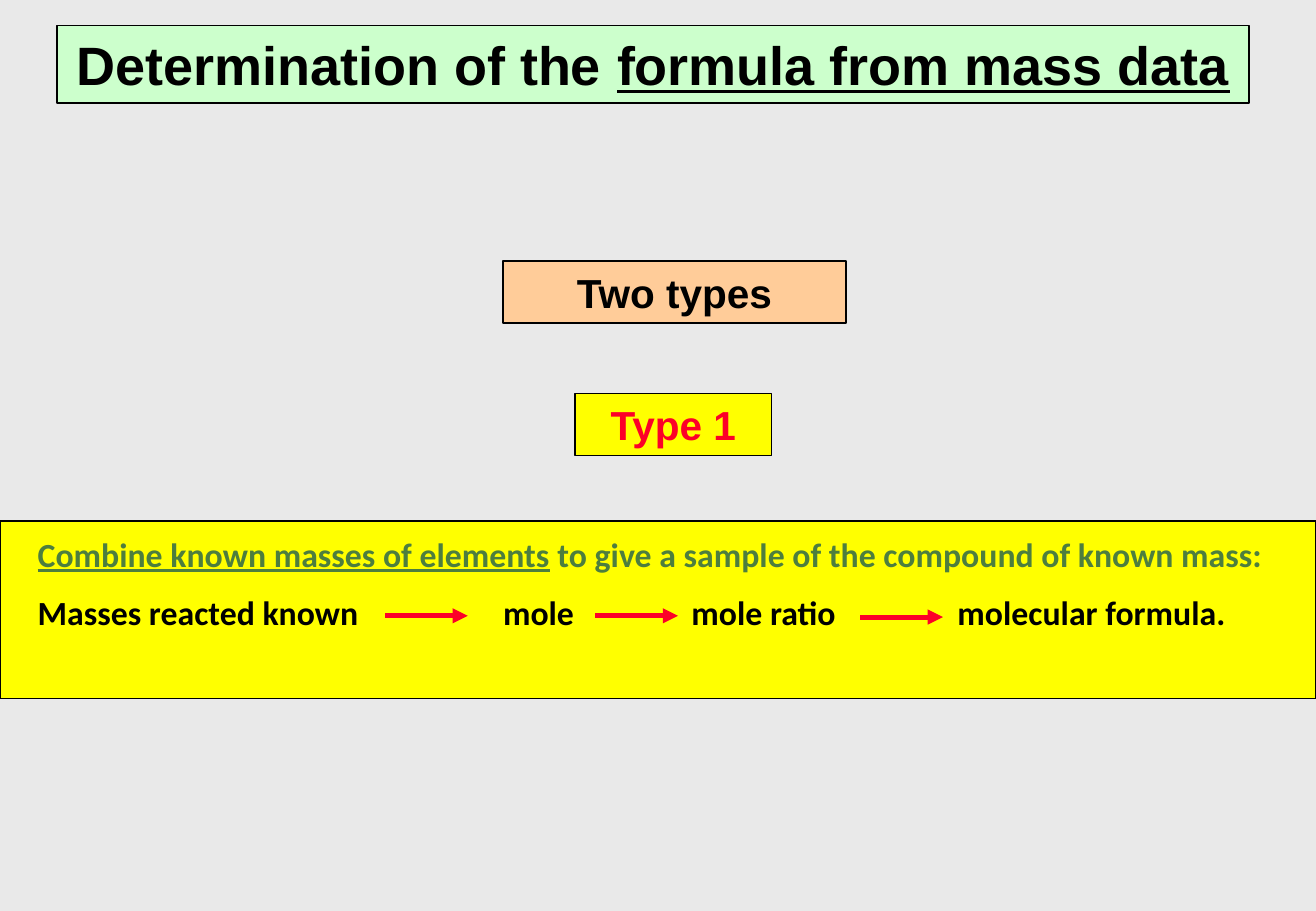
import pptx
import pptx.dml.color
import pptx.enum.shapes
import pptx.enum.text
import pptx.oxml
import pptx.oxml.ns
import pptx.util
from pptx.util import Inches

COLORS = {
    "background": "E9E9E9", "black": "000000", "mint": "CCFFCC",
    "peach": "FFCC99", "yellow": "FFFF00", "red": "FC0128", "green": "4D7E3E",
}

# Steps of the method: text, left edge and width within the band
STEPS = (
    ("Masses reacted known", 0.31, 2.8),
    ("mole", 4.14, 0.7),
    ("mole ratio", 5.69, 1.35),
    ("molecular formula.", 7.88, 2.5),
)


def rgb(name):
    return pptx.dml.color.RGBColor.from_string(COLORS[name])


def place(sp, box):
    sp.left, sp.top, sp.width, sp.height = (Inches(v) for v in box)


def paint(sp, fill):
    sp.fill.solid()
    sp.fill.fore_color.rgb = rgb(fill)
    sp.line.color.rgb = rgb("black")
    sp.line.width = pptx.util.Pt(1)


def add_box(slide, box, fill):
    sp = slide.shapes.add_shape(
        pptx.enum.shapes.MSO_SHAPE.RECTANGLE, *(Inches(v) for v in box))
    sp.shadow.inherit = False
    paint(sp, fill)
    return sp


def add_run(p, text, size, font, color, underline=False):
    r = p.add_run()
    r.text = text
    r.font.size = pptx.util.Pt(size)
    r.font.name = font
    r.font.bold = True
    r.font.underline = underline
    r.font.color.rgb = rgb(color)


def add_label(slide, box, text, fill, color):
    sp = add_box(slide, box, fill)
    p = sp.text_frame.paragraphs[0]
    p.alignment = pptx.enum.text.PP_ALIGN.CENTER
    add_run(p, text, 24, "Arial", color)


def add_title(slide, box):
    sp = slide.shapes.title
    place(sp, box)
    paint(sp, "mint")
    tf = sp.text_frame
    tf.auto_size = pptx.enum.text.MSO_AUTO_SIZE.NONE
    p = tf.paragraphs[0]
    p.alignment = pptx.enum.text.PP_ALIGN.CENTER
    add_run(p, "Determination of the ", 32, "Arial", "black")
    add_run(p, "formula from mass data", 32, "Arial", "black", True)


def add_step(slide, box, text):
    sp = slide.shapes.add_textbox(*(Inches(v) for v in box))
    tf = sp.text_frame
    tf.word_wrap = True
    tf.margin_left = tf.margin_top = tf.margin_right = tf.margin_bottom = 0
    add_run(tf.paragraphs[0], text, 20, "Calibri", "black")


def add_arrow(slide, x, y, length):
    cxn = slide.shapes.add_connector(
        pptx.enum.shapes.MSO_CONNECTOR.STRAIGHT,
        Inches(x), Inches(y), Inches(x + length), Inches(y))
    cxn.line.color.rgb = rgb("red")
    cxn.line.width = pptx.util.Pt(3)
    ns = pptx.oxml.ns.nsdecls("a")
    cxn.line._get_or_add_ln().append(
        pptx.oxml.parse_xml(f'<a:tailEnd {ns} type="triangle"/>'))
    cxn._element.spPr.append(pptx.oxml.parse_xml(f"<a:effectLst {ns}/>"))


def add_method(slide, box):
    left, top, width, height = box
    band = add_box(slide, box, "yellow")
    slide.shapes._spTree.insert(2, band._element)  # behind the body text

    # Introduction, without a bullet
    body = slide.placeholders[1]
    place(body, (left + 0.21, top + 0.05, width - 0.42, 0.45))
    tf = body.text_frame
    tf.auto_size = pptx.enum.text.MSO_AUTO_SIZE.NONE
    p = tf.paragraphs[0]
    add_run(p, "Combine known masses of elements", 20, "Calibri", "green", True)
    add_run(p, " to give a sample of the compound of known mass:", 20,
            "Calibri", "green")
    p.alignment = pptx.enum.text.PP_ALIGN.LEFT
    p.space_before = pptx.util.Pt(0)
    pPr = p._p.get_or_add_pPr()
    pPr.set("marL", "0")
    pPr.set("indent", "0")
    ns = pptx.oxml.ns.nsdecls("a")
    pPr.append(pptx.oxml.parse_xml(f"<a:buNone {ns}/>"))

    # Steps and the arrows between them
    for text, x, step_width in STEPS:
        add_step(slide, (left + x, top + 0.58, step_width, 0.34), text)
    for x, y in ((3.17, 0.78), (4.9, 0.78), (7.08, 0.79)):
        add_arrow(slide, left + x, top + y, 0.68)


def main():
    prs = pptx.Presentation()
    prs.slide_width, prs.slide_height = Inches(10.83), Inches(7.5)
    slide = prs.slides.add_slide(prs.slide_layouts[1])
    slide.background.fill.solid()
    slide.background.fill.fore_color.rgb = rgb("background")

    add_title(slide, (0.47, 0.21, 9.81, 0.64))
    add_method(slide, (0, 4.29, 10.83, 1.46))
    add_label(slide, (4.14, 2.15, 2.82, 0.51), "Two types", "peach", "black")
    add_label(slide, (4.73, 3.24, 1.62, 0.51), "Type 1", "yellow", "red")
    prs.save("out.pptx")


if __name__ == "__main__":
    main()
